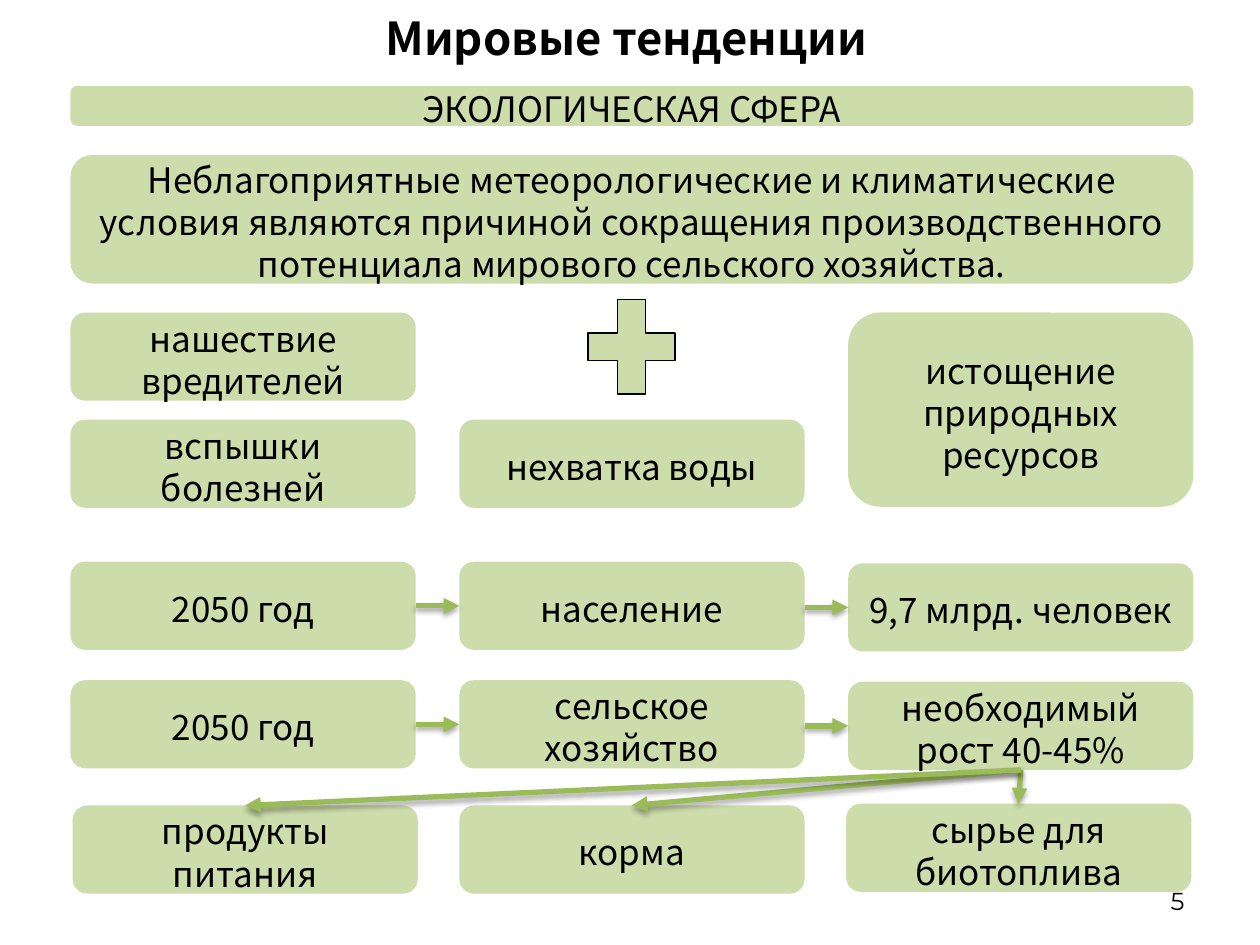
from dataclasses import dataclass

from lxml import etree
from pptx import Presentation
from pptx.dml.color import RGBColor
from pptx.enum.shapes import MSO_CONNECTOR, MSO_SHAPE
from pptx.enum.text import MSO_ANCHOR, PP_ALIGN
from pptx.oxml import parse_xml
from pptx.oxml.ns import nsdecls, qn
from pptx.util import Pt

COLORS = {"green": "9BBB59", "black": "000000"}
FONT = "Noto Sans CJK JP"
COLS = [40.3, 262.5, 484.7]
WIDE, TALL = 197.3, 50.4
FULL = COLS[-1] + WIDE - COLS[0]


@dataclass
class Box:
    text: str
    left: float
    top: float
    width: float = WIDE
    height: float = TALL


@dataclass
class Arrow:
    x1: float
    y1: float
    x2: float
    y2: float


def color(name: str) -> RGBColor:
    return RGBColor.from_string(COLORS[name])


def style(frame, size: float, align, font: str = FONT, bold: bool = False) -> None:
    frame.word_wrap = True
    frame.vertical_anchor = MSO_ANCHOR.MIDDLE
    for para in frame.paragraphs:
        para.alignment = align
        for run in para.runs:
            run.font.size = Pt(size)
            run.font.name = font
            run.font.bold = bold
            run.font.color.rgb = color("black")


def tint(shape) -> None:
    """Fill with half-transparent green."""
    shape.shadow.inherit = False
    shape.fill.solid()
    shape.fill.fore_color.rgb = color("green")
    tone = shape.fill._xPr.find(qn("a:solidFill"))[0]
    etree.SubElement(tone, qn("a:alpha"), val="50000")


def add_label(slide, box: Box, size: float, align, font: str = FONT,
              bold: bool = False) -> None:
    label = slide.shapes.add_textbox(
        Pt(box.left), Pt(box.top), Pt(box.width), Pt(box.height))
    label.text_frame.text = box.text
    style(label.text_frame, size, align, font, bold)


def add_box(slide, box: Box) -> None:
    shape = slide.shapes.add_shape(
        MSO_SHAPE.ROUNDED_RECTANGLE,
        Pt(box.left), Pt(box.top), Pt(box.width), Pt(box.height))
    tint(shape)
    shape.line.fill.background()
    frame = shape.text_frame
    frame.text = box.text
    frame.margin_top, frame.margin_bottom = Pt(5), Pt(2.2)
    style(frame, 20, PP_ALIGN.CENTER)
    frame.paragraphs[0].line_spacing = Pt(24)


def add_arrow(slide, arrow: Arrow) -> None:
    line = slide.shapes.add_connector(
        MSO_CONNECTOR.STRAIGHT,
        Pt(arrow.x1), Pt(arrow.y1), Pt(arrow.x2), Pt(arrow.y2))
    line.line.color.rgb = color("green")
    line.line.width = Pt(3)
    etree.SubElement(line.line._get_or_add_ln(), qn("a:tailEnd"), type="triangle")
    # Soft shadow straight below
    line._element.spPr.append(parse_xml(
        f'<a:effectLst {nsdecls("a")}>'
        f'<a:outerShdw blurRad="{Pt(3.1)}" dist="{Pt(1.8)}" dir="5400000" rotWithShape="0">'
        f'<a:srgbClr val="{COLORS["black"]}"><a:alpha val="35000"/></a:srgbClr>'
        '</a:outerShdw></a:effectLst>'))


def main() -> None:
    deck = Presentation()
    deck.slide_width, deck.slide_height = Pt(720), Pt(540)
    slide = deck.slides.add_slide(deck.slide_layouts[6])

    # Page number and title
    add_label(slide, Box("5", 516.2, 500.4, 167.8, 28.8), 14,
              PP_ALIGN.RIGHT, "Montserrat")
    add_label(slide, Box("Мировые тенденции", 34, 1.4, 648, 40.3), 25.9,
              PP_ALIGN.CENTER, bold=True)

    # Full-width boxes and factors
    boxes = [
        Box("ЭКОЛОГИЧЕСКАЯ СФЕРА", COLS[0], 49, FULL, 23),
        Box("Неблагоприятные метеорологические и климатические условия "
            "являются причиной сокращения производственного потенциала "
            "мирового сельского хозяйства.", COLS[0], 88.6, FULL, 73.4),
        Box("нашествие вредителей", COLS[0], 178.6),
        Box("вспышки болезней", COLS[0], 239.8),
        Box("нехватка воды", COLS[1], 239.8),
        Box("истощение природных ресурсов", COLS[2], 178.6, WIDE, 111),
        # Outcomes
        Box("продукты питания", COLS[0] + 1.2, 460.3),
        Box("корма", COLS[1], 460.3),
        Box("сырье для биотоплива", COLS[2] - 1.2, 459.3),
    ]
    arrows = []

    # Forecast rows, linked left to right
    rows = [
        (321, ["2050 год", "население", "9,7 млрд. человек"]),
        (388.7, ["2050 год", "сельское хозяйство", "необходимый\vрост 40-45%"]),
    ]
    for top, texts in rows:
        for col, text in enumerate(texts):
            drop = 0.9 if col == 2 else 0
            boxes.append(Box(text, COLS[col], top + drop))
            if col:
                mid = top + drop + TALL / 2
                arrows.append(Arrow(COLS[col - 1] + WIDE, mid, COLS[col], mid))

    # Fan from the needed growth to the outcomes
    for x, y in [(582, 459.3), (361, 460.3), (140, 460.3)]:
        arrows.append(Arrow(COLS[2] + WIDE / 2, 440, x, y))

    for box in boxes:
        add_box(slide, box)

    # Plus sign
    plus = slide.shapes.add_shape(
        MSO_SHAPE.MATH_PLUS, Pt(327), Pt(161.5), Pt(67.7), Pt(73.4))
    plus.adjustments[0] = 0.235
    tint(plus)
    plus.line.color.rgb = color("black")
    plus.line.width = Pt(0)

    for arrow in arrows:
        add_arrow(slide, arrow)

    deck.save("out.pptx")


if __name__ == "__main__":
    main()
